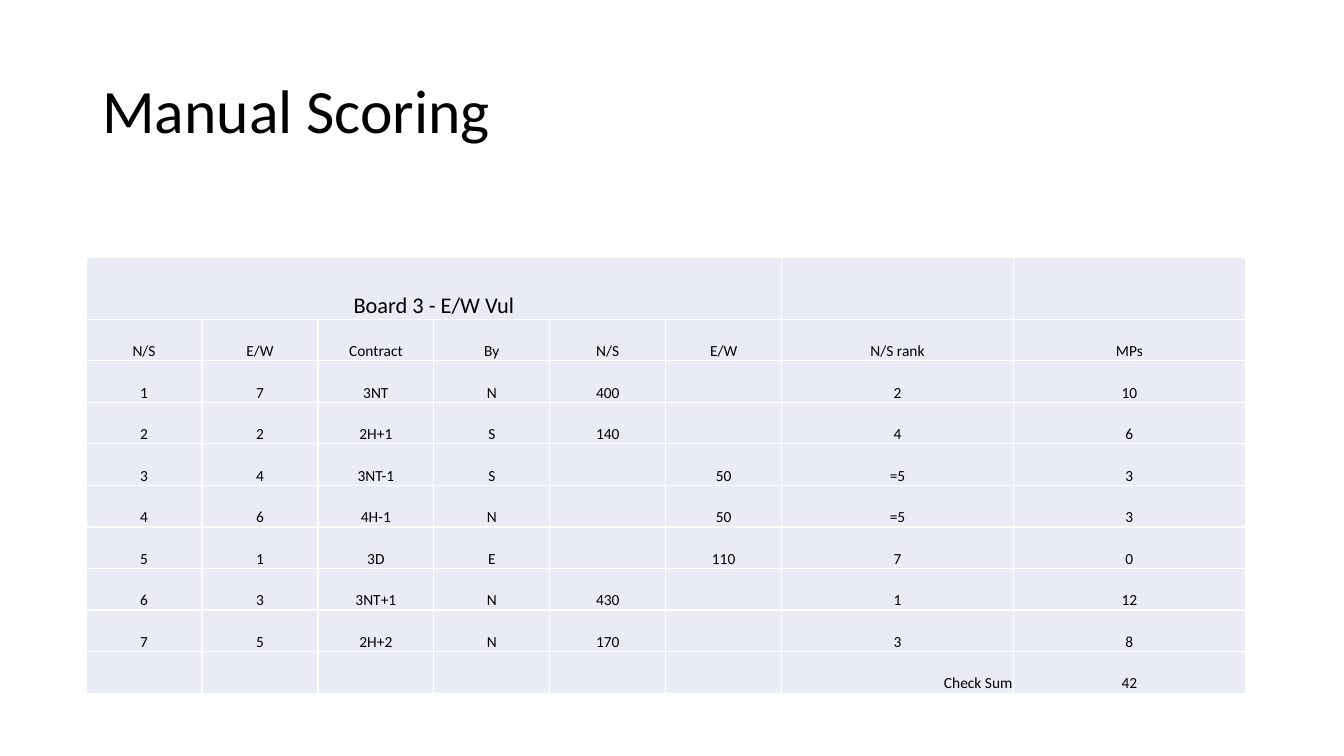
from dataclasses import dataclass

from lxml import etree
from pptx import Presentation
from pptx.dml.color import RGBColor
from pptx.enum.text import MSO_ANCHOR, PP_ALIGN
from pptx.oxml.ns import qn
from pptx.util import Emu, Pt

MIDDLE, BOTTOM = MSO_ANCHOR.MIDDLE, MSO_ANCHOR.BOTTOM
LEFT, CENTER, RIGHT = PP_ALIGN.LEFT, PP_ALIGN.CENTER, PP_ALIGN.RIGHT
BLANK_LAYOUT = 6
EMU_PER_PX = 3810


@dataclass(frozen=True)
class Theme:
    """Colours, font and type sizes of the slide."""
    font: str = "Calibri"
    ink: str = "000000"
    cell: str = "E9EBF5"
    border: str = "FFFFFF"
    border_width: int = 1
    title: int = 44
    board: int = 16
    body: int = 11


THEME = Theme()
COLUMN_WIDTHS = [276] * 6 + [552] * 2
BOARD_HEIGHT, ROW_HEIGHT = 146, 99
BOARD_SPAN = 6
CHECK_SUM = "Check Sum"
SCORES = [
    ["Board 3 - E/W Vul", "", "", "", "", "", "", ""],
    ["N/S", "E/W", "Contract", "By", "N/S", "E/W", "N/S rank", "MPs"],
    ["1", "7", "3NT", "N", "400", "", "2", "10"],
    ["2", "2", "2H+1", "S", "140", "", "4", "6"],
    ["3", "4", "3NT-1", "S", "", "50", "=5", "3"],
    ["4", "6", "4H-1", "N", "", "50", "=5", "3"],
    ["5", "1", "3D", "E", "", "110", "7", "0"],
    ["6", "3", "3NT+1", "N", "430", "", "1", "12"],
    ["7", "5", "2H+2", "N", "170", "", "3", "8"],
    ["", "", "", "", "", "", CHECK_SUM, "42"],
]


def px(length):
    """Turn pixels into EMU."""
    return Emu(length * EMU_PER_PX)


def write(frame, text, size, align):
    """Put one styled paragraph into a text frame."""
    para = frame.paragraphs[0]
    para.text = text
    para.alignment = align
    para.font.name = THEME.font
    para.font.size = Pt(size)
    para.font.color.rgb = RGBColor.from_string(THEME.ink)
    return para


def add_title(page, text, left, top, width, height):
    """Add the slide title."""
    box = page.shapes.add_textbox(px(left), px(top), px(width), px(height))
    box.text_frame.word_wrap = True
    box.text_frame.vertical_anchor = MIDDLE
    write(box.text_frame, text, THEME.title, LEFT).line_spacing = 0.9


def add_borders(cell):
    """Draw a solid line on each side of a cell, ahead of its fill."""
    properties = cell._tc.get_or_add_tcPr()
    for position, side in enumerate(("lnL", "lnR", "lnT", "lnB")):
        line = etree.Element(qn(f"a:{side}"), w=str(Pt(THEME.border_width)))
        fill = etree.SubElement(line, qn("a:solidFill"))
        etree.SubElement(fill, qn("a:srgbClr"), val=THEME.border)
        properties.insert(position, line)


def style_cell(cell, text, size):
    """Fill one table cell with its text, colour and borders."""
    cell.margin_left = cell.margin_right = cell.margin_top = px(2)
    cell.margin_bottom = 0
    cell.vertical_anchor = BOTTOM
    cell.fill.solid()
    cell.fill.fore_color.rgb = RGBColor.from_string(THEME.cell)
    add_borders(cell)
    write(cell.text_frame, text, size, RIGHT if text == CHECK_SUM else CENTER)


def add_score_table(page, left, top):
    """Add the table of board results."""
    heights = [BOARD_HEIGHT] + [ROW_HEIGHT] * (len(SCORES) - 1)
    table = page.shapes.add_table(
        len(heights), len(COLUMN_WIDTHS), px(left), px(top),
        px(sum(COLUMN_WIDTHS)), px(sum(heights))).table
    table.first_row = table.horz_banding = False
    for column, width in zip(table.columns, COLUMN_WIDTHS):
        column.width = px(width)
    for row, height, texts in zip(table.rows, heights, SCORES):
        row.height = px(height)
        size = THEME.board if height == BOARD_HEIGHT else THEME.body
        for cell, text in zip(row.cells, texts):
            style_cell(cell, text, size)
    table.cell(0, 0).merge(table.cell(0, BOARD_SPAN - 1))


def main():
    """Build and save the deck."""
    deck = Presentation()
    deck.slide_width, deck.slide_height = px(3200), px(1800)
    page = deck.slides.add_slide(deck.slide_layouts[BLANK_LAYOUT])
    add_title(page, "Manual Scoring", 220, 96, 2760, 348)
    add_score_table(page, 205, 614)
    deck.save("out.pptx")


if __name__ == "__main__":
    main()
